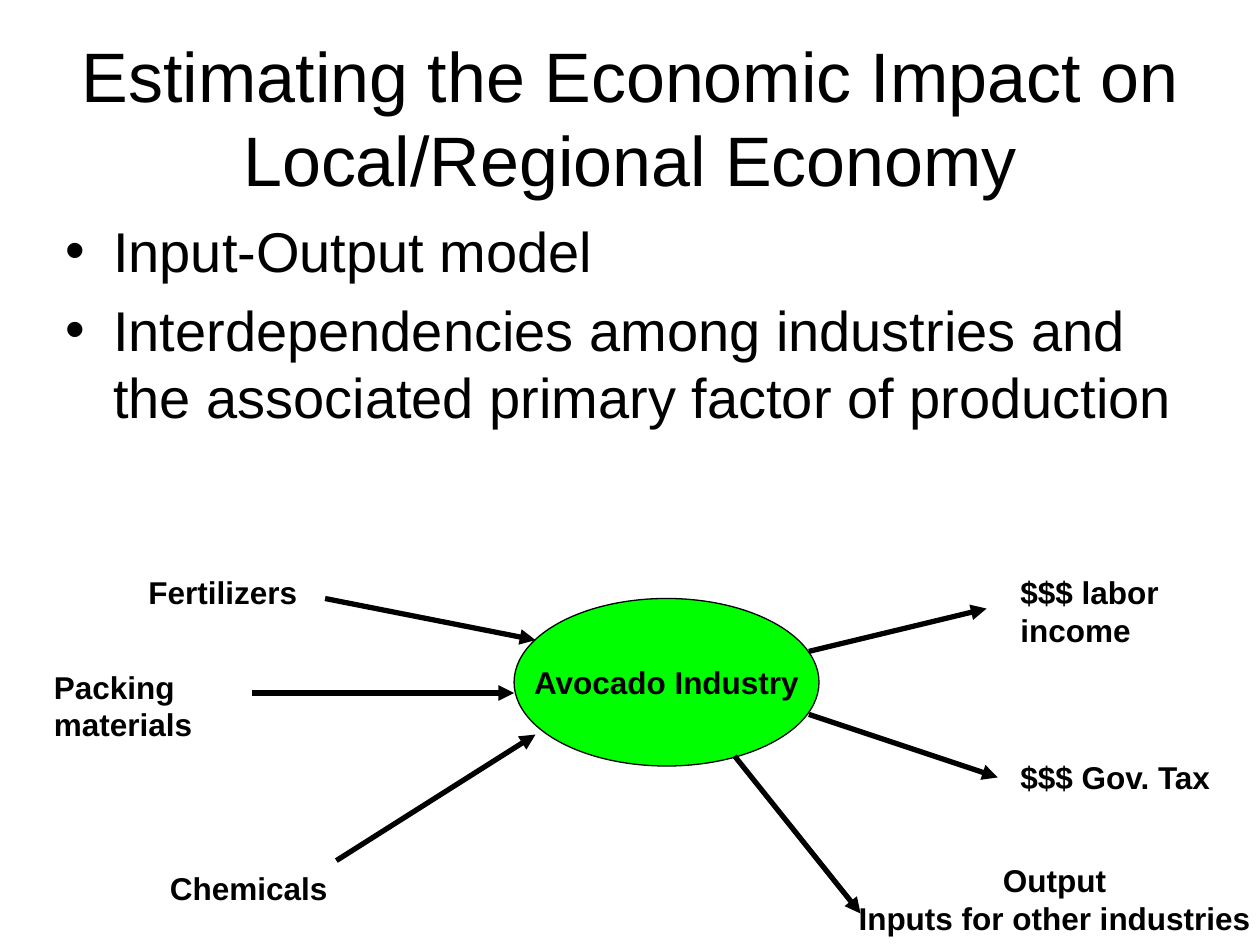
from dataclasses import dataclass

from lxml import etree
from pptx import Presentation
from pptx.dml.color import RGBColor
from pptx.enum import shapes, text
from pptx.oxml.ns import qn
from pptx.util import Inches, Pt


@dataclass(frozen=True)
class Theme:
    font: str = "Arial"
    ink: RGBColor = RGBColor(0, 0, 0)
    industry: RGBColor = RGBColor(0, 255, 0)
    title_size: int = 40
    body_size: int = 32
    label_size: int = 18
    arrow_width: float = 3
    outline_width: float = 0.75


@dataclass(frozen=True)
class Box:
    left: float
    top: float
    width: float
    height: float

    def lengths(self) -> list:
        return [Inches(v) for v in (self.left, self.top, self.width, self.height)]


@dataclass(frozen=True)
class Label:
    lines: tuple[str, ...]
    box: Box
    centered: bool = False


@dataclass(frozen=True)
class Arrow:
    start: tuple[float, float]
    end: tuple[float, float]


THEME = Theme()
TITLE = "Estimating the Economic Impact on Local/Regional Economy"
BULLETS = (
    "Input-Output model",
    "Interdependencies among industries and the associated primary factor of production",
)
LABELS = (
    Label(("Fertilizers",), Box(1.08, 4.5, 1.58, 0.4)),
    Label(("Packing materials",), Box(0.33, 5.25, 1.58, 0.7)),
    Label(("Chemicals",), Box(1.25, 6.85, 1.58, 0.4)),
    Label(("$$$ labor income",), Box(8, 4.5, 1.58, 0.7)),
    Label(("$$$ Gov. Tax",), Box(8, 5.97, 1.92, 0.4)),
    Label(("Output", "Inputs for other industries"), Box(6.77, 6.83, 3.2, 0.61), centered=True),
)
ARROWS = (
    Arrow((2.58, 4.75), (4.25, 5.08)),
    Arrow((2, 5.5), (4.08, 5.5)),
    Arrow((2.67, 6.83), (4.25, 5.83)),
    Arrow((6.42, 5.17), (7.83, 4.83)),
    Arrow((6.42, 5.67), (7.92, 6.17)),
    Arrow((5.83, 6), (6.83, 7.25)),
)


def write_lines(frame, lines, size: int, bold: bool = False, centered: bool = False) -> None:
    for index, line in enumerate(lines):
        paragraph = frame.paragraphs[0] if index == 0 else frame.add_paragraph()
        paragraph.alignment = text.PP_ALIGN.CENTER if centered else text.PP_ALIGN.LEFT
        run = paragraph.add_run()
        run.text = line
        run.font.name = THEME.font
        run.font.size = Pt(size)
        run.font.bold = bold
        run.font.color.rgb = THEME.ink


def add_text_frame(slide, box: Box, middle: bool = False):
    frame = slide.shapes.add_textbox(*box.lengths()).text_frame
    frame.word_wrap = True
    frame.vertical_anchor = text.MSO_ANCHOR.MIDDLE if middle else text.MSO_ANCHOR.TOP
    return frame


def add_bullets(slide, box: Box) -> None:
    frame = add_text_frame(slide, box)
    write_lines(frame, BULLETS, THEME.body_size)
    for index, paragraph in enumerate(frame.paragraphs):
        properties = paragraph._p.get_or_add_pPr()
        properties.set("marL", str(Inches(0.38)))
        properties.set("indent", str(Inches(-0.38)))
        etree.SubElement(properties, qn("a:buFont"), typeface=THEME.font)
        etree.SubElement(properties, qn("a:buChar"), char="•")
        if index:
            paragraph.space_before = Pt(0.2 * THEME.body_size)


def add_industry(slide, box: Box) -> None:
    shape = slide.shapes.add_shape(shapes.MSO_SHAPE.OVAL, *box.lengths())
    shape.shadow.inherit = False
    shape.fill.solid()
    shape.fill.fore_color.rgb = THEME.industry
    shape.line.color.rgb = THEME.ink
    shape.line.width = Pt(THEME.outline_width)
    frame = shape.text_frame
    frame.word_wrap = False
    frame.vertical_anchor = text.MSO_ANCHOR.MIDDLE
    write_lines(frame, ("Avocado Industry",), THEME.label_size, bold=True, centered=True)


def add_label(slide, label: Label) -> None:
    """Add a label; a centered one uses the full width and height of its box."""
    frame = add_text_frame(slide, label.box, middle=label.centered)
    if label.centered:
        frame.margin_left = frame.margin_right = Inches(0)
        frame.margin_top = frame.margin_bottom = Inches(0)
    write_lines(frame, label.lines, THEME.label_size, bold=True, centered=label.centered)


def add_arrow(slide, arrow: Arrow) -> None:
    points = [Inches(v) for v in (*arrow.start, *arrow.end)]
    connector = slide.shapes.add_connector(shapes.MSO_CONNECTOR.STRAIGHT, *points)
    connector.line.color.rgb = THEME.ink
    connector.line.width = Pt(THEME.arrow_width)
    etree.SubElement(connector.line._get_or_add_ln(), qn("a:tailEnd"), type="triangle")
    etree.SubElement(connector._element.spPr, qn("a:effectLst"))


def main() -> None:
    presentation = Presentation()
    presentation.slide_width, presentation.slide_height = Inches(10), Inches(7.5)
    slide = presentation.slides.add_slide(presentation.slide_layouts[6])

    title = add_text_frame(slide, Box(0.5, 0.3, 9, 1.25), middle=True)
    write_lines(title, (TITLE,), THEME.title_size, centered=True)
    add_bullets(slide, Box(0.42, 1.67, 9, 4.95))
    add_industry(slide, Box(4.08, 4.75, 2.42, 1.33))
    for arrow in ARROWS:
        add_arrow(slide, arrow)
    for label in LABELS:
        add_label(slide, label)

    presentation.save("out.pptx")


if __name__ == "__main__":
    main()
